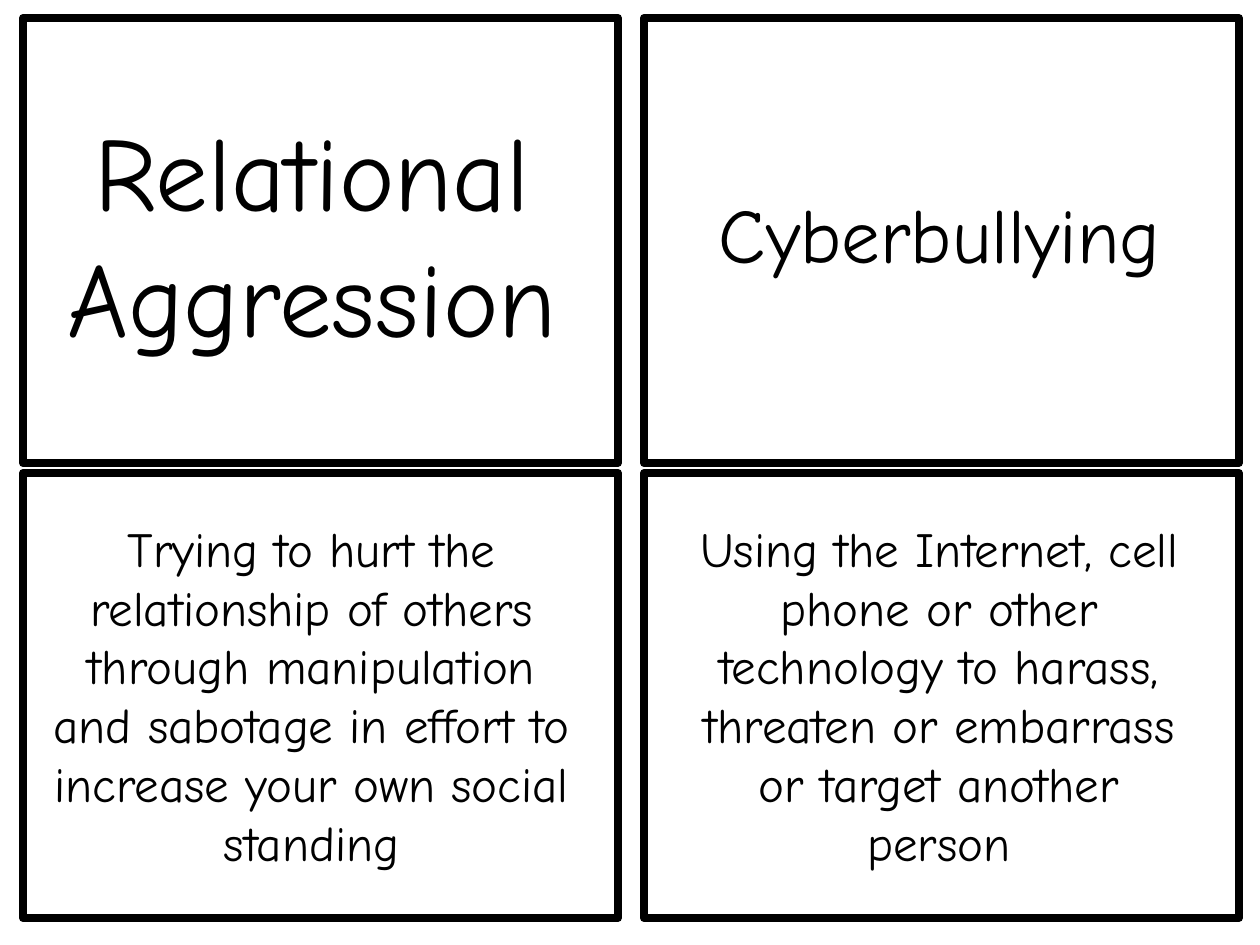
from pptx import Presentation
from pptx.dml.color import RGBColor
from pptx.enum.shapes import MSO_SHAPE
from pptx.enum.text import MSO_AUTO_SIZE, PP_ALIGN
from pptx.util import Emu, Pt

PX_PER_INCH = 126
COLORS = {"ink": "000000", "paper": "FFFFFF"}
FONT = "Comic Neue"

CARD_LEFT, CARD_TOP = 23, 18
CARD_WIDTH, CARD_HEIGHT = 595, 445
COLUMN_STEP, ROW_STEP = 621, 455

TERMS = [
    ("Relational Aggression", (30, 100, 564, 267), 60),
    ("Cyberbullying", (662, 180, 556, 106), 44),
]
DEFINITIONS = [
    ("Trying to hurt the relationship of others through manipulation "
     "and sabotage in effort to increase your own social standing",
     (37, 512, 549, 369), 28),
    ("Using the Internet, cell phone or other technology to harass, "
     "threaten or embarrass or target another person",
     (667, 512, 544, 369), 28),
]


def px(length):
    return Emu(round(length * 914400 / PX_PER_INCH))


def color(name):
    return RGBColor.from_string(COLORS[name])


def add_card(page, column, row):
    card = page.shapes.add_shape(
        MSO_SHAPE.RECTANGLE,
        px(CARD_LEFT + column * COLUMN_STEP),
        px(CARD_TOP + row * ROW_STEP),
        px(CARD_WIDTH),
        px(CARD_HEIGHT),
    )
    card.shadow.inherit = False
    card.fill.solid()
    card.fill.fore_color.rgb = color("paper")
    card.line.color.rgb = color("ink")
    card.line.width = Pt(4.5)


def add_text(page, text, bounds, *, size, ink="ink", align=PP_ALIGN.CENTER):
    box = page.shapes.add_textbox(*map(px, bounds))
    frame = box.text_frame
    frame.word_wrap = True
    frame.auto_size = MSO_AUTO_SIZE.SHAPE_TO_FIT_TEXT
    para = frame.paragraphs[0]
    para.alignment = align
    span = para.add_run()
    span.text = text
    span.font.name = FONT
    span.font.size = Pt(size)
    span.font.color.rgb = color(ink)


def main():
    deck = Presentation()
    deck.slide_width, deck.slide_height = px(1260), px(945)
    page = deck.slides.add_slide(deck.slide_layouts[6])
    for column in range(2):
        for row in range(2):
            add_card(page, column, row)
    for text, bounds, size in TERMS + DEFINITIONS:
        add_text(page, text, bounds, size=size)
    deck.save("out.pptx")


if __name__ == "__main__":
    main()
